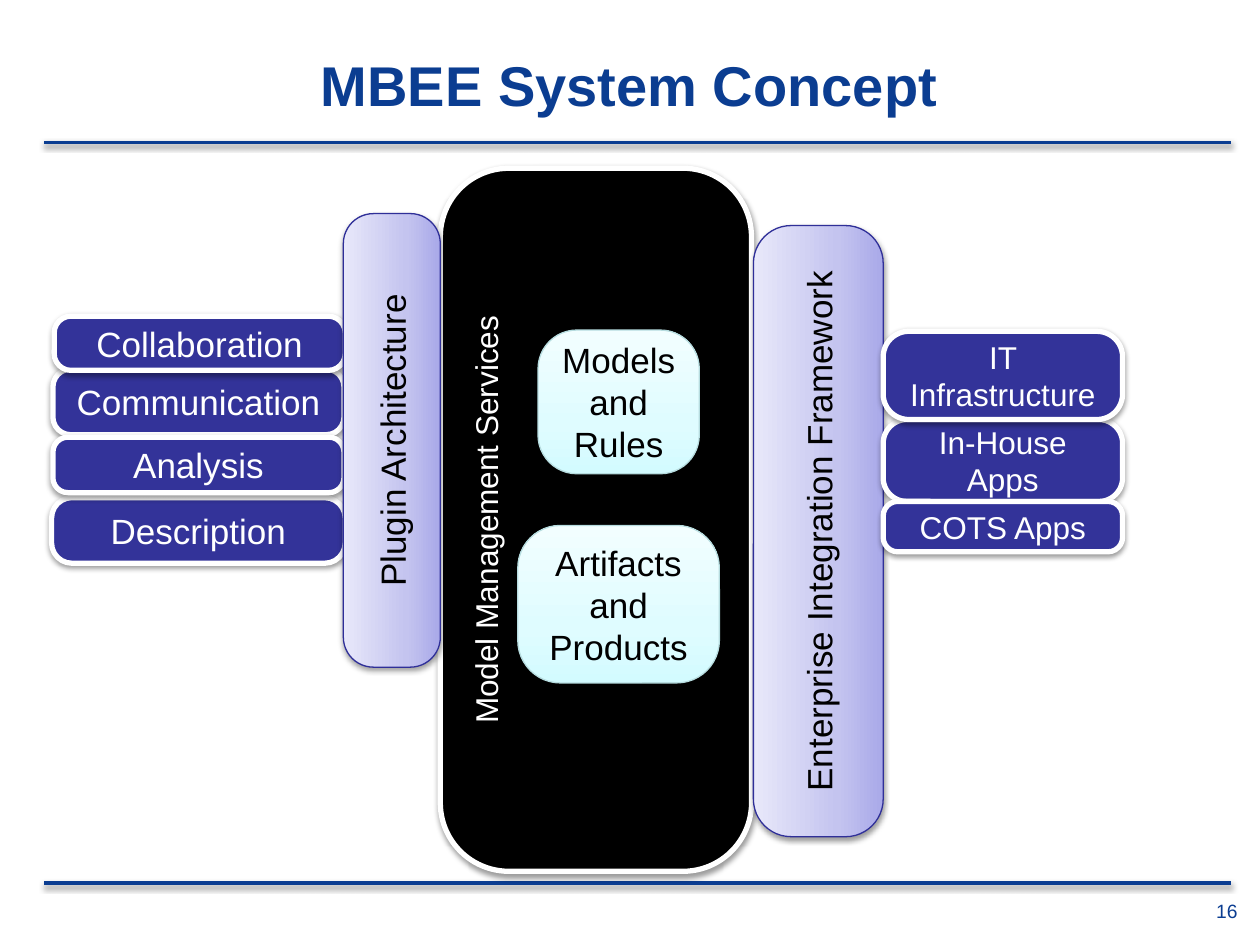
from copy import deepcopy
from dataclasses import dataclass
from typing import Optional

from lxml import etree
from pptx import Presentation
from pptx import util as u
from pptx.dml.color import RGBColor
from pptx.enum import shapes, text
from pptx.oxml import ns

BLUE = RGBColor(0x0B, 0x3D, 0x91)
INDIGO = RGBColor(0x33, 0x33, 0x99)
LILAC_EDGE = RGBColor(0x2F, 0x2F, 0x98)
AQUA_EDGE = RGBColor(0xB6, 0xDC, 0xDF)
BLACK = RGBColor(0, 0, 0)
WHITE = RGBColor(0xFF, 0xFF, 0xFF)
LILAC = (RGBColor(0xA9, 0xA9, 0xE9), RGBColor(0xC4, 0xC4, 0xEF), RGBColor(0xE8, 0xE8, 0xFA))
AQUA = (RGBColor(0xD3, 0xFB, 0xFF), RGBColor(0xDF, 0xFC, 0xFF), RGBColor(0xF2, 0xFE, 0xFF))
STOP_POSITIONS = (0, 0.35, 1)
FONT = "Arial"


@dataclass(frozen=True)
class Style:
    fill: tuple[RGBColor, ...]
    edge: RGBColor
    edge_width: float
    font_color: RGBColor


@dataclass(frozen=True)
class Block:
    label: str
    left: float
    top: float
    width: float
    height: float
    corner: float
    style: Style
    size: int = 20
    rotation: int = 0
    anchor: text.MSO_ANCHOR = text.MSO_ANCHOR.MIDDLE


SOLID = Style((INDIGO,), WHITE, 3, WHITE)
CORE = Style((BLACK,), WHITE, 3, WHITE)
PILLAR = Style(LILAC, LILAC_EDGE, 0.75, BLACK)
STORE = Style(AQUA, AQUA_EDGE, 0.75, BLACK)

BLOCKS = (
    Block("Model Management Services", 1.94, 2.89, 5.58, 2.47, 0.22, CORE, 18, 270,
          text.MSO_ANCHOR.TOP),
    Block("Description", 0.41, 3.95, 2.33, 0.52, 0.31, SOLID),
    Block("Communication", 0.42, 2.93, 2.31, 0.52, 0.27, SOLID),
    Block("Enterprise Integration Framework", 4.07, 3.7, 4.85, 1.03, 0.29, PILLAR, rotation=270),
    Block("Analysis", 0.42, 3.47, 2.31, 0.44, 0.27, SOLID),
    Block("Collaboration", 0.43, 2.51, 2.31, 0.43, 0.31, SOLID),
    Block("Plugin Architecture", 1.31, 3.11, 3.6, 0.77, 0.31, PILLAR, rotation=270),
    Block("In-House Apps", 7.01, 3.33, 1.9, 0.65, 0.29, SOLID, 18),
    Block("COTS Apps", 7.01, 3.98, 1.9, 0.4, 0.29, SOLID, 18),
    Block("Models and Rules", 4.27, 2.62, 1.28, 1.14, 0.27, STORE),
    Block("IT Infrastructure", 7.01, 2.63, 1.9, 0.7, 0.29, SOLID, 18),
    Block("Artifacts and Products", 4.11, 4.17, 1.6, 1.25, 0.27, STORE),
)


def add_shadow(shape) -> None:
    properties = shape._element.spPr
    for effects in properties.findall(ns.qn("a:effectLst")):
        properties.remove(effects)
    effects = etree.SubElement(properties, ns.qn("a:effectLst"))
    shadow = etree.SubElement(effects, ns.qn("a:outerShdw"), blurRad=str(u.Pt(3.1)),
                              dist=str(u.Pt(1.6)), dir="5400000", rotWithShape="0")
    color = etree.SubElement(shadow, ns.qn("a:srgbClr"), val="000000")
    etree.SubElement(color, ns.qn("a:alpha"), val="38000")


def fill_shape(shape, colors: tuple[RGBColor, ...]) -> None:
    if len(colors) == 1:
        shape.fill.solid()
        shape.fill.fore_color.rgb = colors[0]
        return
    shape.fill.gradient()
    shape.fill.gradient_angle = 90
    stop_list = shape._element.spPr.find(".//" + ns.qn("a:gsLst"))
    stop_list.append(deepcopy(stop_list[0]))
    for stop, position, color in zip(shape.fill.gradient_stops, STOP_POSITIONS, colors):
        stop.position = position
        stop.color.rgb = color


def write_text(text_frame, content: str, size: int, color: RGBColor,
               alignment: text.PP_ALIGN, bold: Optional[bool] = None) -> None:
    text_frame.text = content
    text_frame.word_wrap = True
    paragraph = text_frame.paragraphs[0]
    paragraph.alignment = alignment
    font = paragraph.runs[0].font
    font.name, font.size, font.bold = FONT, u.Pt(size), bold
    font.color.rgb = color


def add_block(slide, block: Block) -> None:
    shape = slide.shapes.add_shape(
        shapes.MSO_SHAPE.ROUNDED_RECTANGLE, u.Inches(block.left), u.Inches(block.top),
        u.Inches(block.width), u.Inches(block.height))
    shape.adjustments[0] = block.corner
    shape.rotation = block.rotation
    fill_shape(shape, block.style.fill)
    shape.line.color.rgb = block.style.edge
    shape.line.width = u.Pt(block.style.edge_width)
    add_shadow(shape)
    text_frame = shape.text_frame
    write_text(text_frame, block.label, block.size, block.style.font_color, text.PP_ALIGN.CENTER)
    text_frame.vertical_anchor = block.anchor
    text_frame.margin_left = text_frame.margin_right = u.Inches(0.09)


def add_rule(slide, top: float) -> None:
    rule = slide.shapes.add_connector(
        shapes.MSO_CONNECTOR.STRAIGHT, u.Inches(0.35), u.Inches(top),
        u.Inches(9.77), u.Inches(top))
    rule.line.color.rgb = BLUE
    rule.line.width = u.Pt(2)
    add_shadow(rule)


def add_title(slide) -> None:
    title = slide.shapes.title
    title.left, title.top = u.Inches(0.85), u.Inches(0.42)
    title.width, title.height = u.Inches(8.29), u.Inches(0.49)
    write_text(title.text_frame, "MBEE System Concept", 32, BLUE, text.PP_ALIGN.CENTER, True)
    title.text_frame.vertical_anchor = text.MSO_ANCHOR.MIDDLE


def add_page_number(slide) -> None:
    number = slide.shapes.add_textbox(u.Inches(9.5), u.Inches(7.09), u.Inches(0.42), u.Inches(0.38))
    write_text(number.text_frame, "16", 11, BLUE, text.PP_ALIGN.RIGHT)


def main() -> None:
    presentation = Presentation()
    presentation.slide_width, presentation.slide_height = u.Inches(10), u.Inches(7.5)
    slide = presentation.slides.add_slide(presentation.slide_layouts[5])
    for top in (1.13, 7.01):
        add_rule(slide, top)
    add_title(slide)
    add_page_number(slide)
    for block in BLOCKS:
        add_block(slide, block)
    presentation.save("out.pptx")


if __name__ == "__main__":
    main()
